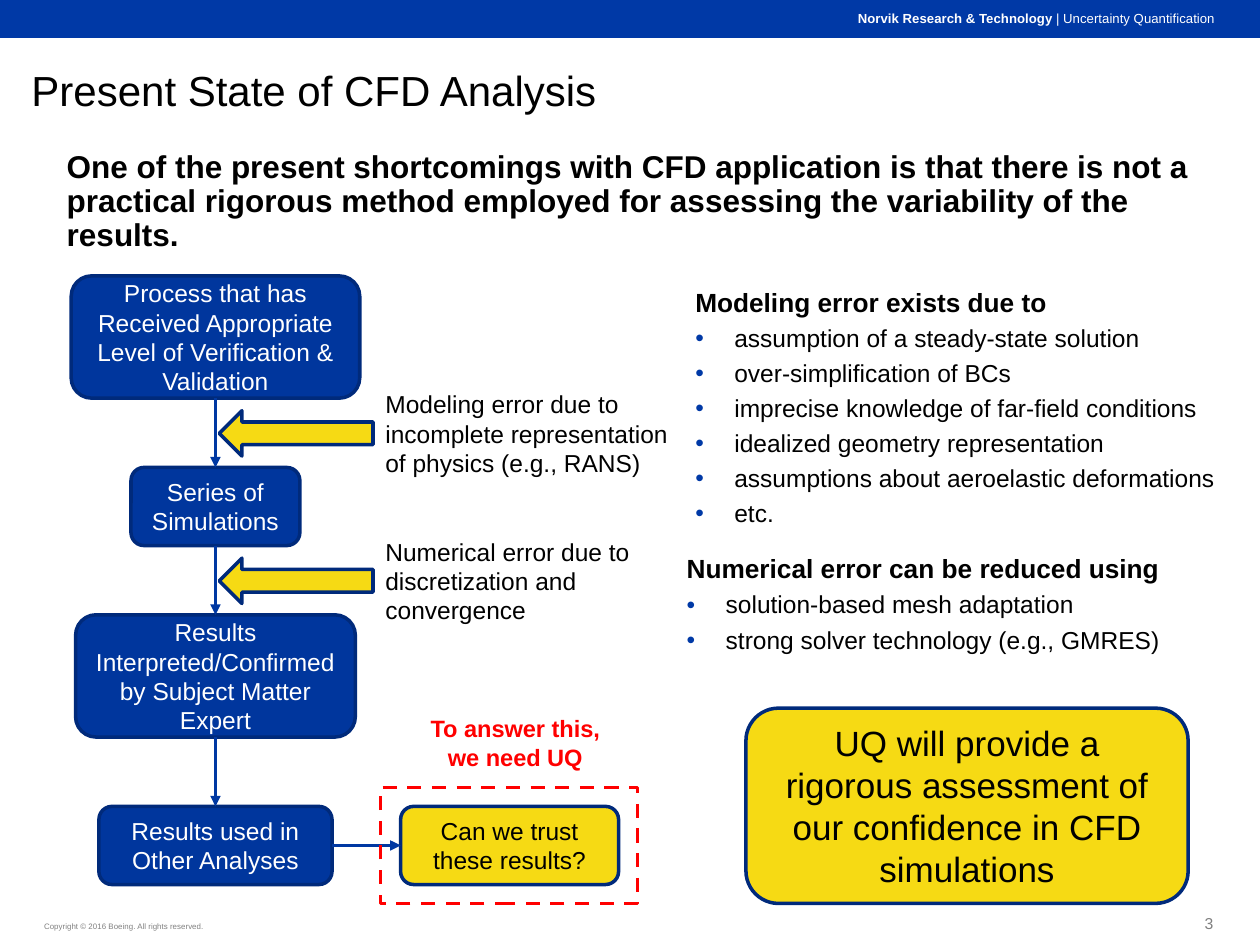
from lxml import etree
from pptx import Presentation
from pptx.dml.color import RGBColor
from pptx.enum.dml import MSO_LINE
from pptx.enum.shapes import MSO_CONNECTOR, MSO_SHAPE
from pptx.enum.text import MSO_ANCHOR, PP_ALIGN
from pptx.oxml.ns import qn
from pptx.util import Inches, Pt

LEFT, MID, RIGHT = PP_ALIGN.LEFT, PP_ALIGN.CENTER, PP_ALIGN.RIGHT
TOP, CENTRE, BOTTOM = MSO_ANCHOR.TOP, MSO_ANCHOR.MIDDLE, MSO_ANCHOR.BOTTOM
RECT, ROUND, ARROW = MSO_SHAPE.RECTANGLE, MSO_SHAPE.ROUNDED_RECTANGLE, MSO_SHAPE.LEFT_ARROW
DASH, STRAIGHT = MSO_LINE.DASH, MSO_CONNECTOR.STRAIGHT

FONT = "Arial"
BLUE, NAVY, BAR, WIRE = "00369D", "002A7B", "0039A6", "0038A2"
GOLD, RED, GREY, BLACK, WHITE = "F6DA14", "FF0000", "808080", "000000", "FFFFFF"

# Grid of 100 columns by 75 rows
SIZE = Inches(10), Inches(7.5)
CELL = SIZE[0] // 100
INSET = (1, 0.5, 1, 0.5)
NONE = (0, 0, 0, 0)
THIN = (0.1, 0.1, 0.1, 0.1)

# Flow chart: text, width, top and height in cells
AXIS = 17.1
FLOW = [
    ("Process that has Received Appropriate Level of Verification & Validation", 22.9, 21.9, 9.7),
    ("Series of Simulations", 13.4, 37.1, 6.2),
    ("Results Interpreted/Confirmed by Subject Matter Expert", 22.2, 48.8, 9.7),
    ("Results used in Other Analyses", 18.5, 64, 6.2),
]
# Error notes: text, width, middle row of the arrow
NOTES = [
    ("Modeling error due to incomplete representation of physics (e.g., RANS)", 24.8, 34.4),
    ("Numerical error due to discretization and convergence", 22.2, 46.1),
]
MODEL = [
    "assumption of a steady-state solution",
    "over-simplification of BCs",
    "imprecise knowledge of far-field conditions",
    "idealized geometry representation",
    "assumptions about aeroelastic deformations",
    "etc.",
]
SOLVE = ["solution-based mesh adaptation", "strong solver technology (e.g., GMRES)"]


def grid(*cells):
    return [round(c * CELL) for c in cells]


def rgb(code):
    return RGBColor.from_string(code)


def style(para, size, color, bold=False, align=LEFT, gap=None):
    font = para.font
    font.name, font.size, font.bold = FONT, Pt(size), bold
    font.color.rgb = rgb(color)
    para.alignment = align
    if gap:
        para.line_spacing = gap


def frame(shape, anchor, inset):
    tf = shape.text_frame
    tf.word_wrap = True
    tf.vertical_anchor = anchor
    tf.margin_left, tf.margin_top, tf.margin_right, tf.margin_bottom = grid(*inset)
    return tf


def text(slide, at, words, size, color=BLACK, bold=False, align=LEFT,
         anchor=TOP, inset=INSET, gap=None):
    tf = frame(slide.shapes.add_textbox(*grid(*at)), anchor, inset)
    para = tf.paragraphs[0]
    para.text = words
    style(para, size, color, bold, align, gap)
    return tf


def block(slide, kind, at, fill=None, line=None, dash=None):
    shape = slide.shapes.add_shape(kind, *grid(*at))
    shape.shadow.inherit = False
    if fill:
        shape.fill.solid()
        shape.fill.fore_color.rgb = rgb(fill)
    else:
        shape.fill.background()
    if line:
        shape.line.color.rgb = rgb(line)
        shape.line.width = Pt(2)
        if dash:
            shape.line.dash_style = dash
    else:
        shape.line.fill.background()
    return shape


def node(slide, at, words, fill=BLUE, color=WHITE, size=14):
    para = frame(block(slide, ROUND, at, fill, NAVY), CENTRE, INSET).paragraphs[0]
    para.text = words
    style(para, size, color, align=MID)


def link(slide, *ends):
    wire = slide.shapes.add_connector(STRAIGHT, *grid(*ends))
    wire.line.color.rgb = rgb(WIRE)
    wire.line.width = Pt(2)
    etree.SubElement(wire.line._get_or_add_ln(), qn("a:tailEnd"), type="triangle")
    etree.SubElement(wire._element.spPr, qn("a:effectLst"))


def bullet(para):
    props = para._p.get_or_add_pPr()
    hang = grid(3.1)[0]
    props.set("marL", str(hang))
    props.set("indent", str(-hang))
    tint = etree.SubElement(props, qn("a:buClr"))
    etree.SubElement(tint, qn("a:srgbClr"), val=BAR)
    etree.SubElement(props, qn("a:buFont"), typeface=FONT)
    etree.SubElement(props, qn("a:buChar"), char="•")


def points(slide, at, head, items, inset, space):
    tf = text(slide, at, head, 15, bold=True, inset=inset, gap=0.9)
    for item in items:
        para = tf.add_paragraph()
        para.text = item
        bullet(para)
        style(para, 14, BLACK, gap=0.9)
        para.space_before = Pt(space)


def header(slide):
    block(slide, RECT, (0, -0.1, 100, 3.1), BAR)
    tf = text(slide, (41.5, 0.8, 54.9, 1.3), "", 7.5, WHITE, align=RIGHT, inset=NONE)
    para = tf.paragraphs[0]
    unit, topic = para.add_run(), para.add_run()
    unit.text, topic.text = "Norvik Research & Technology ", "| Uncertainty Quantification"
    unit.font.bold = True
    text(slide, (2.5, 5.1, 90, 4.1), "Present State of CFD Analysis", 24,
         inset=(0, 0.5, 0, 0), gap=0.9)
    text(slide, (5.3, 12, 90, 8.2),
         "One of the present shortcomings with CFD application is that there is not a "
         "practical rigorous method employed for assessing the variability of the results.",
         18, bold=True, inset=NONE, gap=0.9)


def flow(slide):
    for words, wide, top, high in FLOW:
        node(slide, (AXIS - wide / 2, top, wide, high), words)
    for (_, _, top, high), (_, _, end, _) in zip(FLOW, FLOW[1:]):
        link(slide, AXIS, top + high, AXIS, end)
    for words, wide, row in NOTES:
        block(slide, ARROW, (17.4, row - 1.8, 12.2, 3.6), GOLD, NAVY)
        text(slide, (29.6, row - 4, wide, 8.1), words, 14)


def question(slide):
    _, wide, top, high = FLOW[-1]
    node(slide, (31.8, top, 17.3, high), "Can we trust these results?", GOLD, BLACK)
    link(slide, AXIS + wide / 2, top + high / 2, 31.8, top + high / 2)
    block(slide, RECT, (30.2, 62.5, 20.4, 9.2), line=RED, dash=DASH)
    text(slide, (32.7, 56.2, 16.4, 5.6), "To answer this, we need UQ", 13.5, RED, True, MID)


def main():
    deck = Presentation()
    deck.slide_width, deck.slide_height = SIZE
    slide = deck.slides.add_slide(deck.slide_layouts[6])
    header(slide)
    flow(slide)
    question(slide)
    # Right column: error lists and conclusion
    points(slide, (54.2, 22.5, 45, 20.2), "Modeling error exists due to", MODEL, INSET, 4.8)
    points(slide, (54.5, 44.1, 43.3, 7.9), "Numerical error can be reduced using", SOLVE, NONE, 5)
    node(slide, (59.2, 56.2, 35.1, 15.5),
         "UQ will provide a rigorous assessment of our confidence in CFD simulations",
         GOLD, BLACK, 20)
    # Footer
    text(slide, (3.4, 73.1, 22.6, 0.9), "Copyright © 2016 Boeing. All rights reserved.",
         4.5, GREY, anchor=BOTTOM, inset=THIN)
    text(slide, (76.9, 71.4, 19.5, 2.7), "3", 9, GREY, align=RIGHT, anchor=BOTTOM, inset=THIN)
    deck.save("out.pptx")


if __name__ == "__main__":
    main()
